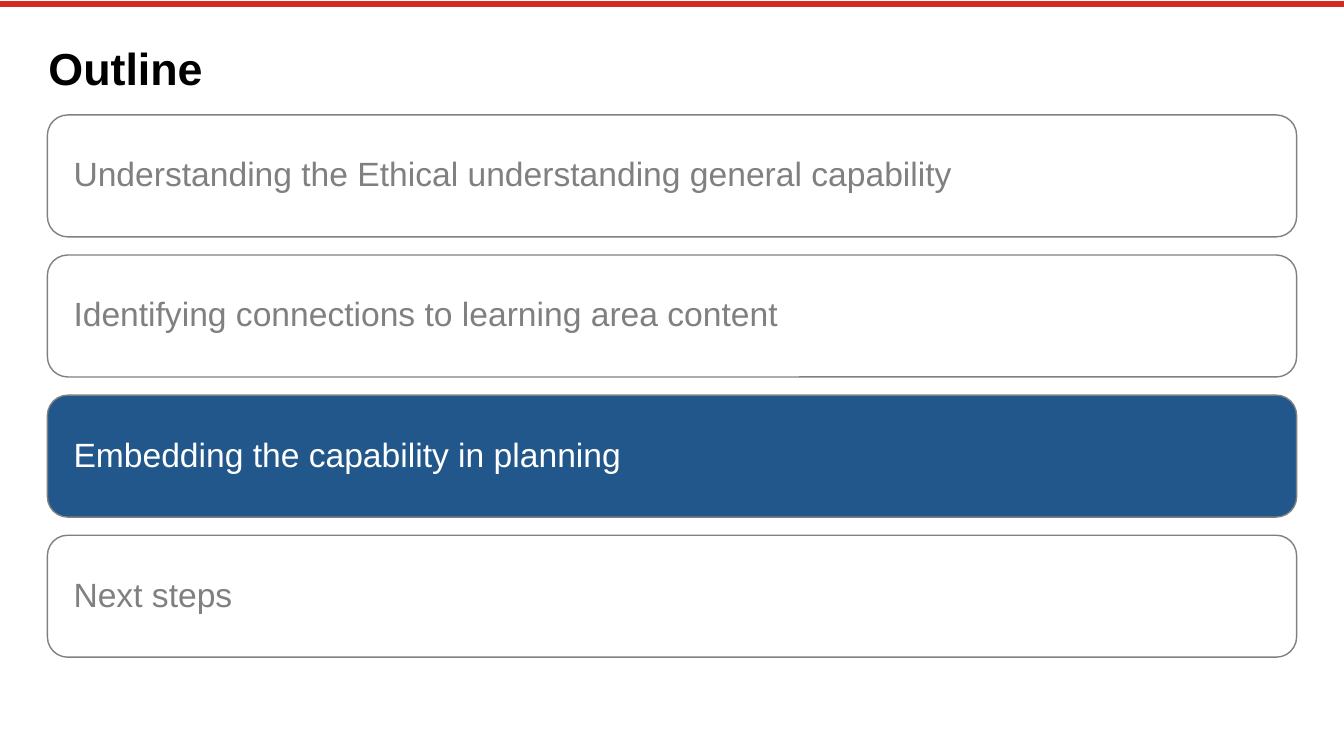
from dataclasses import dataclass

from lxml import etree
from pptx import Presentation
from pptx.dml.color import RGBColor
from pptx.enum.shapes import MSO_CONNECTOR, MSO_SHAPE
from pptx.enum.text import MSO_ANCHOR, PP_ALIGN
from pptx.oxml.ns import qn
from pptx.util import Inches, Pt

STRAIGHT = MSO_CONNECTOR.STRAIGHT
ROUNDED = MSO_SHAPE.ROUNDED_RECTANGLE
MIDDLE, TOP = MSO_ANCHOR.MIDDLE, MSO_ANCHOR.TOP
LEFT = PP_ALIGN.LEFT

SLIDE_WIDTH, SLIDE_HEIGHT = 13.33, 7.5
CONTENT_WIDTH = 12.39
TOPIC_LEFT, TOPIC_TOP, TOPIC_HEIGHT, TOPIC_PITCH = 0.47, 1.14, 1.21, 1.39
CURRENT_TOPIC = "Embedding the capability in planning"
TOPICS = (
    "Understanding the Ethical understanding general capability",
    "Identifying connections to learning area content",
    CURRENT_TOPIC,
    "Next steps",
)


@dataclass(frozen=True)
class Theme:
    """Colours, font and type sizes of the deck."""

    accent: RGBColor = RGBColor(0xD5, 0x2B, 0x1E)
    highlight: RGBColor = RGBColor(0x21, 0x57, 0x8A)
    muted: RGBColor = RGBColor(0x80, 0x80, 0x80)
    light: RGBColor = RGBColor(0xFF, 0xFF, 0xFF)
    dark: RGBColor = RGBColor(0, 0, 0)
    font: str = "Arial"
    title_size: float = 32
    topic_size: float = 24
    rule_width: float = 4.2
    outline_width: float = 1


class OutlineSlide:
    """Draws styled outline elements on one slide."""

    def __init__(self, slide, theme):
        """Keep the slide and its theme."""
        self.slide = slide
        self.theme = theme

    def set_text(self, frame, wording, size, colour, anchor, insets, bold=False):
        """Fill a text frame with one left-aligned paragraph."""
        frame.word_wrap = True
        frame.vertical_anchor = anchor
        (frame.margin_left, frame.margin_top,
         frame.margin_right, frame.margin_bottom) = map(Inches, insets)
        paragraph = frame.paragraphs[0]
        paragraph.text = wording
        paragraph.alignment = LEFT
        font = paragraph.font
        font.name, font.size, font.bold = self.theme.font, Pt(size), bold
        font.color.rgb = colour
        return paragraph

    def rule(self, top):
        """Draw the accent rule across the slide."""
        rule = self.slide.shapes.add_connector(
            STRAIGHT, 0, Inches(top), Inches(SLIDE_WIDTH), Inches(top))
        rule.line.color.rgb = self.theme.accent
        rule.line.width = Pt(self.theme.rule_width)
        etree.SubElement(rule._element.spPr, qn("a:effectLst"))

    def title(self, wording):
        """Add the slide heading."""
        heading = self.slide.shapes.add_textbox(
            Inches(0.48), Inches(0.4), Inches(CONTENT_WIDTH), Inches(0.52))
        self.set_text(heading.text_frame, wording, self.theme.title_size,
                      self.theme.dark, TOP, (0, 0, 0, 0), bold=True)

    def topic(self, wording, top, current):
        """Add one topic bar, highlighted when current."""
        theme = self.theme
        bar = self.slide.shapes.add_shape(
            ROUNDED, Inches(TOPIC_LEFT), Inches(top),
            Inches(CONTENT_WIDTH), Inches(TOPIC_HEIGHT))
        bar.shadow.inherit = False
        bar.fill.solid()
        bar.fill.fore_color.rgb = theme.highlight if current else theme.light
        bar.line.color.rgb = theme.muted
        bar.line.width = Pt(theme.outline_width)
        label = self.set_text(bar.text_frame, wording, theme.topic_size,
                              theme.light if current else theme.muted,
                              MIDDLE, (0.2, 0.1, 0.1, 0.1))
        label.line_spacing = 0.9


def main():
    """Build and save the outline slide."""
    deck = Presentation()
    deck.slide_width, deck.slide_height = Inches(SLIDE_WIDTH), Inches(SLIDE_HEIGHT)
    outline = OutlineSlide(deck.slides.add_slide(deck.slide_layouts[6]), Theme())
    outline.rule(0.04)
    outline.title("Outline")
    for position, topic in enumerate(TOPICS):
        outline.topic(topic, TOPIC_TOP + position * TOPIC_PITCH, topic == CURRENT_TOPIC)
    deck.save("out.pptx")


if __name__ == "__main__":
    main()
